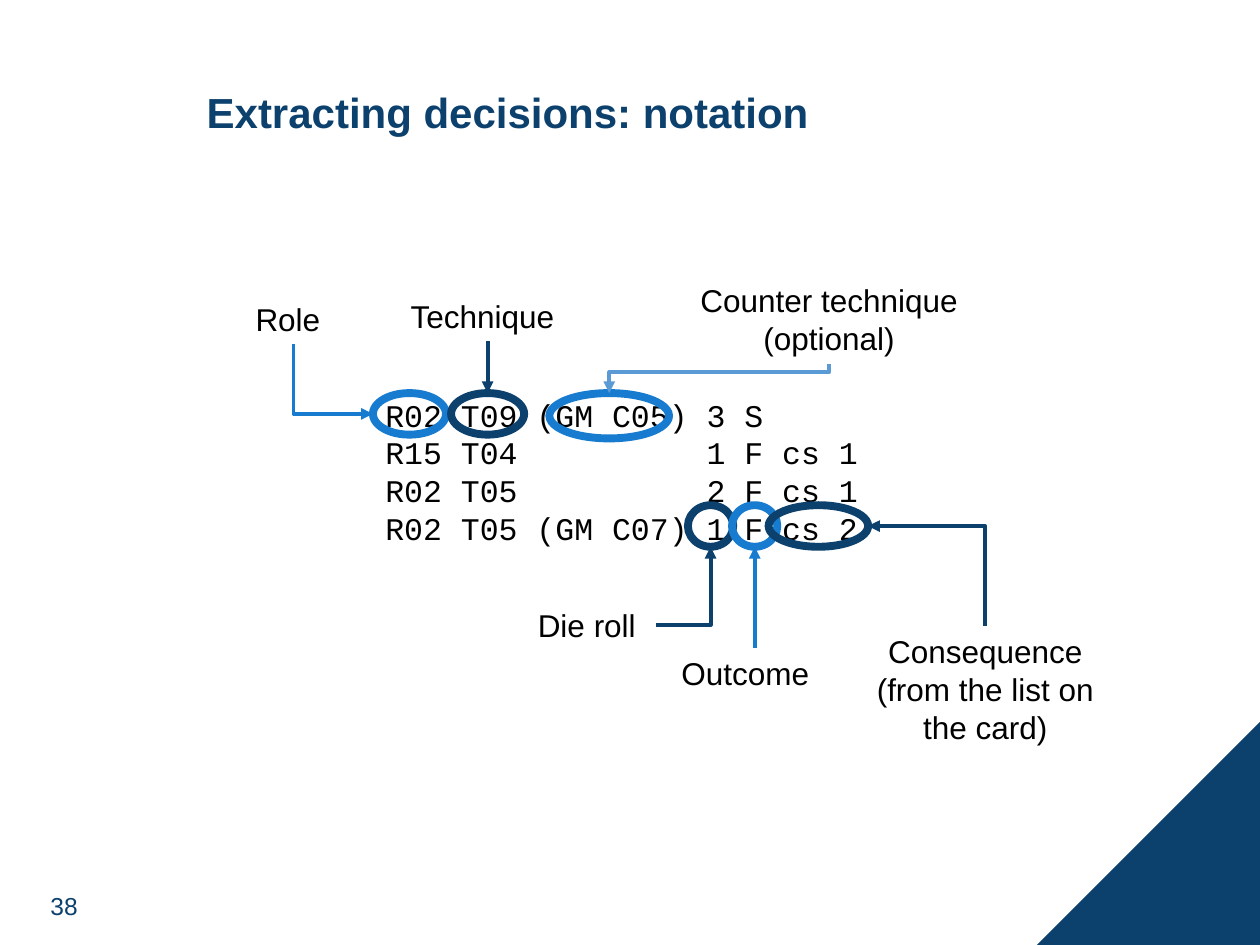
import pptx
import pptx.util
import pptx.dml.color
import pptx.enum.shapes
import pptx.enum.text
import pptx.oxml
import pptx.oxml.ns

# Content: boxes are left, top, width, height in grid units
TITLE = ("Extracting decisions: notation", (15.4, 4.4, 81.3, 9.4))
NUMBER = ("38", (3.3, 70.1, 4.1, 3.6))
NOTATION_BOX = (29.6, 30.9, 50.4, 13.1)
NOTATION = [  # decision, result (aligned at a tab stop)
    ("R02 T09 (GM C05)", "3 S"),
    ("R15 T04", "1 F cs 1"),
    ("R02 T05", "2 F cs 1"),
    ("R02 T05 (GM C07)", "1 F cs 2"),
]
RESULT_COLUMN = 17  # characters before the result
CORNER_SIZE = 17.7

# label lines, label box, centred, ring box, ring colour, arrow colour,
# side the arrow leaves the label, side it meets the ring, connector form
PARTS = [
    (["Role"], (19.3, 23.3, 8, 4), False,
     (29.6, 31.2, 5.8, 3.3), "bright", "bright", "bottom", "left", "bentConnector2"),
    (["Technique"], (31.6, 23.1, 14.2, 4), False,
     (35.8, 31.2, 5.8, 3.3), "navy", "navy", "bottom", "top", "line"),
    (["Counter technique (optional)"], (53.6, 21.8, 24.4, 7.1), True,
     (43.6, 31.2, 9.5, 3.6), "bright", "pale", "bottom", "top", "bentConnector3"),
    (["Die roll"], (41.7, 47.6, 10.4, 4), False,
     (54.6, 40.1, 3.6, 3.3), "navy", "navy", "right", "bottom", "bentConnector2"),
    (["Outcome"], (53.1, 51.4, 13.6, 4), False,
     (58.1, 40.1, 3.6, 3.3), "bright", "bright", "top", "bottom", "line"),
    (["Consequence", "(from the list on the card)"], (66.8, 49.7, 22.8, 10.1), True,
     (61, 40.1, 7.9, 3.3), "navy", "navy", "top", "right", "bentConnector2"),
]
BEND = 0.28  # share of the way at which the three-part connector turns

THEME = {
    "navy": "0C406D", "bright": "177CCF", "pale": "5B9BD5", "black": "000000",
    "sans": "Arial", "mono": "Courier New",
    "title": 24, "body": 18, "number": 14, "ring": 4.5, "arrow": 2.25,
}
COLUMNS, ROWS = 100, 75
SIDES = {"left": (0, 0.5), "right": (1, 0.5), "top": (0.5, 0), "bottom": (0.5, 1)}

deck = pptx.Presentation()
deck.slide_width, deck.slide_height = pptx.util.Inches(10), pptx.util.Inches(7.5)
page = deck.slides.add_slide(deck.slide_layouts[5])


def grid(*lengths):
    """Horizontal and vertical grid lengths in turn, as slide lengths."""
    units = (deck.slide_width / COLUMNS, deck.slide_height / ROWS)
    return [round(length * units[i % 2]) for i, length in enumerate(lengths)]


def colour(name):
    return pptx.dml.color.RGBColor.from_string(THEME[name])


def fill_text(shape, lines, size, font="sans", ink="black", centred=False, bold=False):
    frame = shape.text_frame
    frame.word_wrap = True
    frame.text = "\n".join(lines)
    align = pptx.enum.text.PP_ALIGN
    for para in frame.paragraphs:
        para.alignment = align.CENTER if centred else align.LEFT
        for span in para.runs:
            span.font.name, span.font.bold = THEME[font], bold
            span.font.size = pptx.util.Pt(THEME[size])
            span.font.color.rgb = colour(ink)
    return frame


def add_child(parent, tag, **attributes):
    child = pptx.oxml.parse_xml(f"<a:{tag} {pptx.oxml.ns.nsdecls('a')}/>")
    for name, value in attributes.items():
        child.set(name, str(value))
    parent.append(child)
    return child


def side_point(box, side):
    across, down = SIDES[side]
    left, top, width, height = box
    return left + across * width, top + down * height


def add_arrow(start, end, form, ink, upright):
    """Connector with an arrowhead at its end; upright ones leave vertically."""
    (x1, y1), (x2, y2) = start, end
    if upright:  # turn the ends back by 90 degrees about their middle
        mx, my, dx, dy = (x1 + x2) / 2, (y1 + y2) / 2, (y2 - y1) / 2, (x1 - x2) / 2
        x1, y1, x2, y2 = mx - dx, my - dy, mx + dx, my + dy
    arrow = page.shapes.add_connector(
        pptx.enum.shapes.MSO_CONNECTOR.STRAIGHT, *grid(x1, y1, x2, y2))
    arrow.line.color.rgb = colour(ink)
    arrow.line.width = pptx.util.Pt(THEME["arrow"])
    properties = arrow._element.spPr
    if upright:
        properties.find(pptx.oxml.ns.qn("a:xfrm")).set("rot", "5400000")
    geometry = properties.find(pptx.oxml.ns.qn("a:prstGeom"))
    geometry.set("prst", form)
    if form == "bentConnector3":
        guides = geometry.find(pptx.oxml.ns.qn("a:avLst"))
        add_child(guides, "gd", name="adj1", fmla=f"val {round(BEND * 100000)}")
    add_child(properties.find(pptx.oxml.ns.qn("a:ln")), "tailEnd", type="triangle")
    add_child(properties, "effectLst")


# Title and page number
title = page.shapes.title
title.left, title.top, title.width, title.height = grid(*TITLE[1])
frame = fill_text(title, [TITLE[0]], "title", ink="navy", bold=True)
frame.auto_size = pptx.enum.text.MSO_AUTO_SIZE.NONE
frame.vertical_anchor = pptx.enum.text.MSO_ANCHOR.MIDDLE
frame.paragraphs[0].line_spacing = 0.9

number = page.shapes.add_textbox(*grid(*NUMBER[1]))
frame = fill_text(number, [NUMBER[0]], "number", ink="navy")
frame.margin_left = frame.margin_right = pptx.util.Inches(0.07)
frame.margin_top = frame.margin_bottom = pptx.util.Inches(0.04)
frame.vertical_anchor = pptx.enum.text.MSO_ANCHOR.MIDDLE

# Notation lines, the result set at a tab stop of whole characters
notation = page.shapes.add_textbox(*grid(*NOTATION_BOX))
frame = fill_text(notation, ["\t".join(row) for row in NOTATION], "body", "mono")
tab_stop = pptx.util.Pt(RESULT_COLUMN * 0.6 * THEME["body"])
for para in frame.paragraphs:
    tabs = add_child(para._p.get_or_add_pPr(), "tabLst")
    add_child(tabs, "tab", pos=int(tab_stop), algn="l")

# Rings, labels and the arrows between them
for lines, box, centred, ring_box, ring_ink, arrow_ink, leave, meet, form in PARTS:
    ring = page.shapes.add_shape(pptx.enum.shapes.MSO_SHAPE.OVAL, *grid(*ring_box))
    ring.shadow.inherit = False
    ring.fill.background()
    ring.line.color.rgb = colour(ring_ink)
    ring.line.width = pptx.util.Pt(THEME["ring"])
    label = page.shapes.add_textbox(*grid(*box))
    fill_text(label, lines, "body", centred=centred)
    upright = form != "line" and leave in ("top", "bottom")
    add_arrow(side_point(box, leave), side_point(ring_box, meet), form, arrow_ink, upright)

# Corner triangle
corner = page.shapes.add_shape(
    pptx.enum.shapes.MSO_SHAPE.RIGHT_TRIANGLE,
    *grid(COLUMNS - CORNER_SIZE, ROWS - CORNER_SIZE, CORNER_SIZE, CORNER_SIZE))
corner.rotation = 270
corner.shadow.inherit = False
corner.fill.solid()
corner.fill.fore_color.rgb = colour("navy")
corner.line.fill.background()

deck.save("out.pptx")
